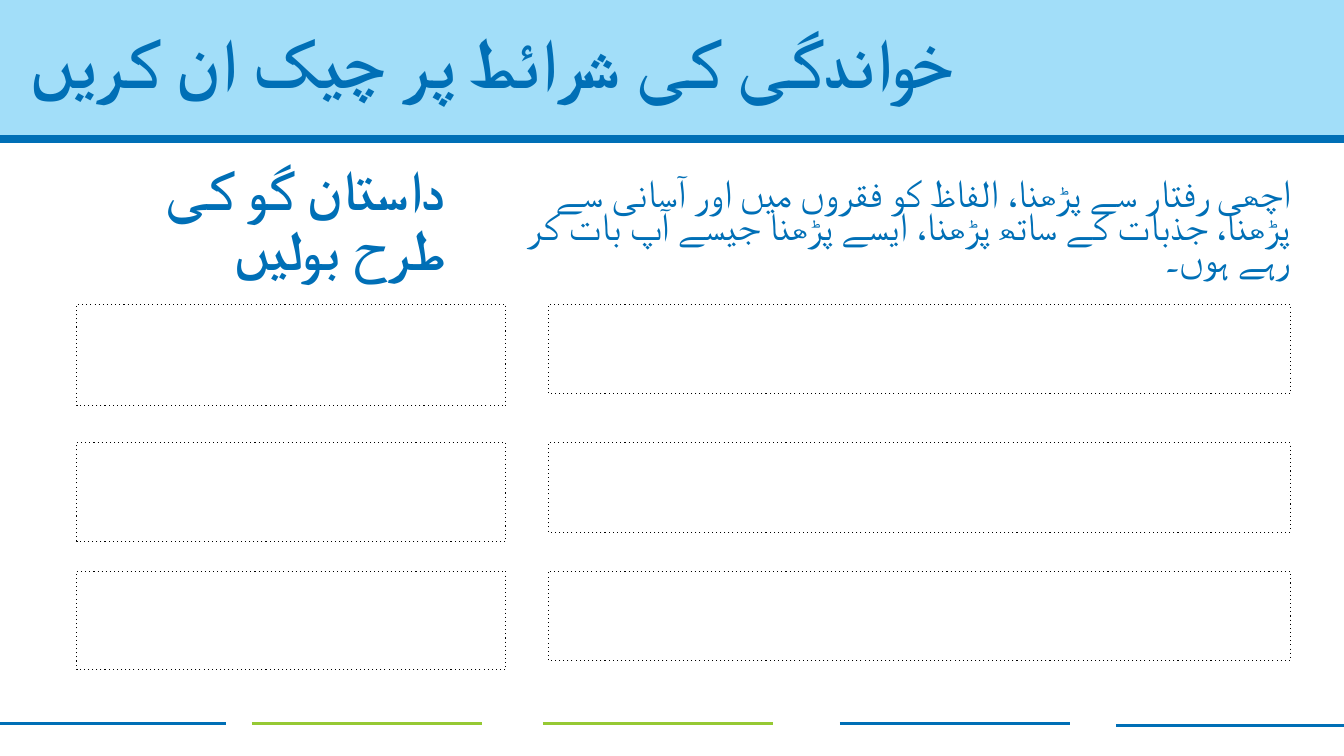
from pptx import Presentation
from pptx.dml.color import RGBColor
from pptx.enum.lang import MSO_LANGUAGE_ID
from pptx.enum.shapes import MSO_CONNECTOR, MSO_SHAPE
from pptx.enum.dml import MSO_LINE
from pptx.enum.text import MSO_ANCHOR, MSO_AUTO_SIZE, PP_ALIGN
from pptx.oxml.ns import qn
from pptx.util import Inches, Pt
from lxml import etree

RECT, LINE = MSO_SHAPE.RECTANGLE, MSO_CONNECTOR.STRAIGHT
DOT, URDU = MSO_LINE.ROUND_DOT, MSO_LANGUAGE_ID.URDU
LEFT, RIGHT = PP_ALIGN.LEFT, PP_ALIGN.RIGHT
MIDDLE, FIXED = MSO_ANCHOR.MIDDLE, MSO_AUTO_SIZE.NONE
COLORS = {"blue": "006FB6", "sky": "A2DEF9", "green": "96C934", "black": "000000"}
FONT = "Calibri"


def color(name):
    return RGBColor.from_string(COLORS[name])


def write(shape, text, size=28, bold=False, align=RIGHT, space=0.9, inset=0.1):
    frame = shape.text_frame
    frame.word_wrap = True
    frame.auto_size = FIXED
    frame.vertical_anchor = MIDDLE
    frame.margin_left, frame.margin_right = Inches(inset), Inches(0.1)
    frame.margin_top = frame.margin_bottom = Inches(0.05)
    para = frame.paragraphs[0]
    para.alignment, para.line_spacing = align, space
    para.space_before = Pt(0)
    para._p.get_or_add_pPr().set("rtl", "1")
    run = para.add_run()
    run.text = text
    font = run.font
    font.name, font.size, font.bold = FONT, Pt(size), bold
    font.color.rgb = color("blue")
    font.language_id = URDU
    etree.SubElement(run._r.get_or_add_rPr(), qn("a:cs"), typeface=FONT)


class Page:
    """Draw on one slide, with all lengths in percent of its size."""

    def __init__(self, deck):
        self.wide, self.high = deck.slide_width, deck.slide_height
        self.slide = deck.slides.add_slide(deck.slide_layouts[5])
        self.shapes = self.slide.shapes

    def place(self, x, y, w, h):
        return [int(part * full / 100) for part, full in
                zip((x, y, w, h), (self.wide, self.high) * 2)]

    def title(self, text, *area, **style):
        shape = self.shapes.title
        shape.left, shape.top, shape.width, shape.height = self.place(*area)
        write(shape, text, **style)
        shape.element.getparent().append(shape.element)

    def text(self, text, *area, **style):
        write(self.shapes.add_textbox(*self.place(*area)), text, **style)

    def band(self, *area):
        shape = self.shapes.add_shape(RECT, *self.place(*area))
        shape.shadow.inherit = False
        shape.fill.solid()
        shape.fill.fore_color.rgb = color("sky")
        shape.line.fill.background()

    def box(self, *area):
        shape = self.shapes.add_shape(RECT, *self.place(*area))
        shape.shadow.inherit = False
        shape.fill.background()
        shape.line.color.rgb = color("black")
        shape.line.width = Pt(0.75)
        shape.line.dash_style = DOT
        shape.line._ln.find(qn("a:prstDash")).set("val", "dot")

    def rule(self, start, end, y, tone="blue", width=2):
        line = self.shapes.add_connector(LINE, *self.place(start, y, end, y))
        line.line.color.rgb = color(tone)
        line.line.width = Pt(width)
        etree.SubElement(line.element.spPr, qn("a:effectLst"))


def main():
    deck = Presentation()
    deck.slide_width, deck.slide_height = Inches(13.33), Inches(7.5)
    page = Page(deck)

    page.band(0, 0, 100, 18.4)
    page.rule(0, 100, 18.4, width=6)
    for start, end, y, tone in (
        (0, 16.8, 95.75, "blue"),
        (18.75, 35.85, 95.75, "green"),
        (40.4, 57.5, 95.75, "green"),
        (62.5, 79.6, 95.75, "blue"),
        (83.05, 100, 96, "blue"),
    ):
        page.rule(start, end, y, tone)

    page.text("اچھی رفتار سے پڑھنا، الفاظ کو فقروں میں اور آسانی سے پڑھنا، "
              "جذبات کے ساتھ پڑھنا، ایسے پڑھنا جیسے آپ بات کر رہے ہوں۔",
              37.65, 21.75, 59.1, 17.45, size=27.8, space=0.7)
    page.text("داستان گو کی طرح بولیں", 5.7, 21.85, 28.2, 15.2, size=40, bold=True)
    page.title("خواندگی کی شرائط پر چیک ان کریں", 0, 0, 100, 17.45,
               size=50, bold=True, align=LEFT, inset=0.3)

    for top, high in ((40.25, 13.45), (58.55, 13.05), (75.55, 13.05)):
        page.box(5.7, top, 31.95, high)
        page.box(40.8, top, 55.2, 11.85)

    deck.save("out.pptx")


if __name__ == "__main__":
    main()
